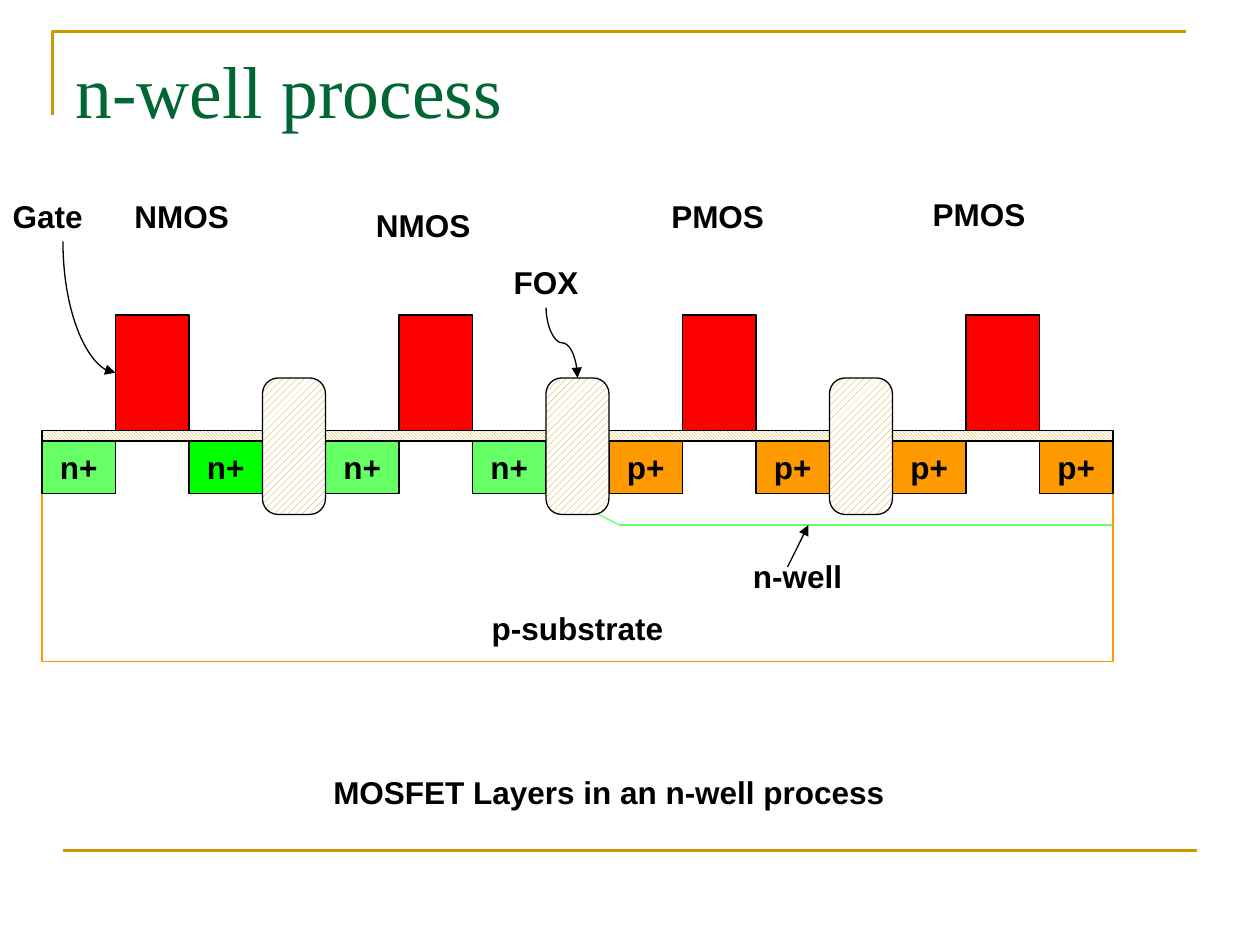
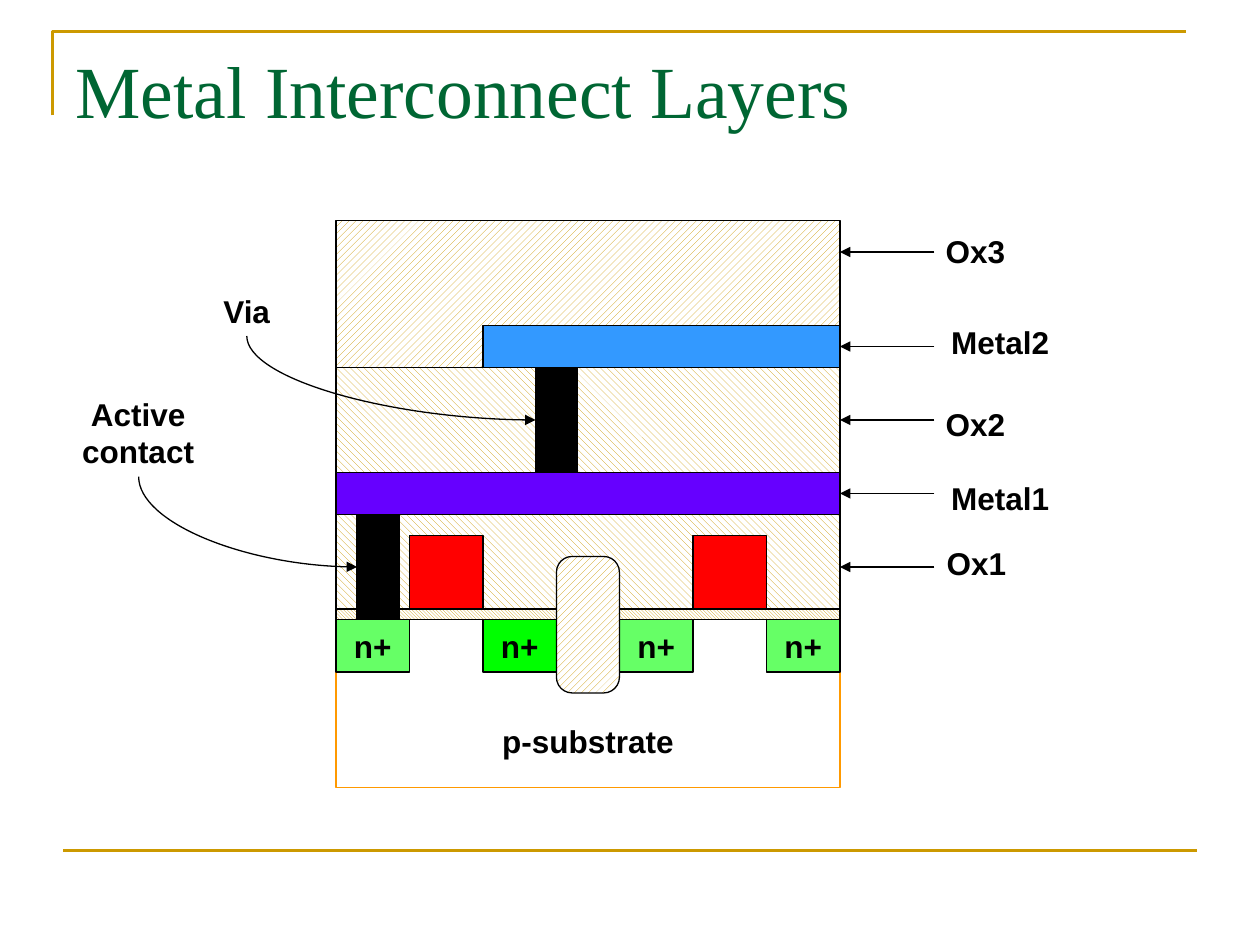
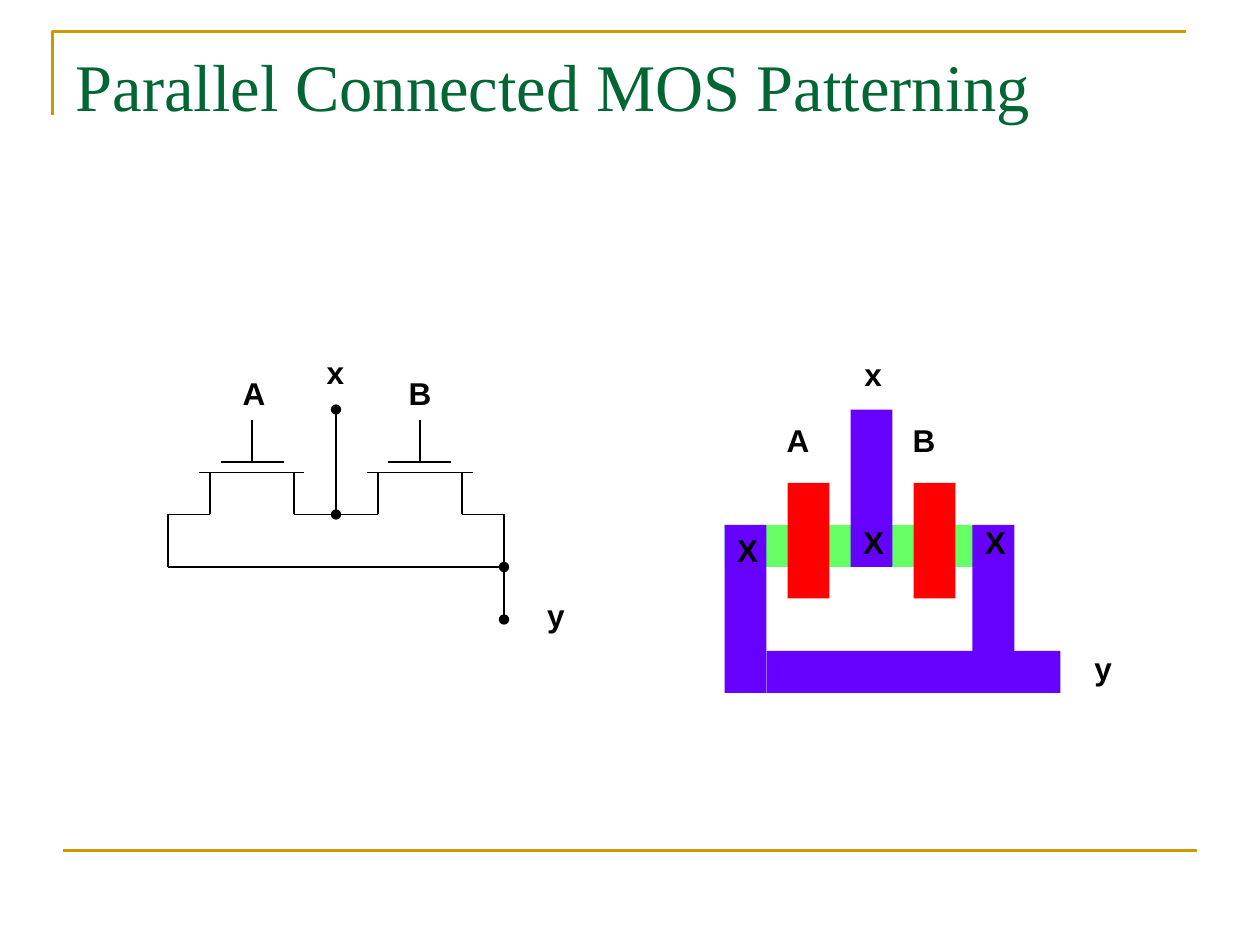
from dataclasses import dataclass
from typing import Any

from lxml import etree
from pptx import Presentation
from pptx import util as u
from pptx.dml.color import RGBColor
from pptx.enum import dml, shapes, text
from pptx.oxml.ns import qn

CELL = u.Inches(1) // 12
COLUMNS, ROWS = 120, 90

BLACK = RGBColor(0x00, 0x00, 0x00)
WHITE = RGBColor(0xFF, 0xFF, 0xFF)
GOLD = RGBColor(0xCC, 0x99, 0x00)
TITLE_GREEN = RGBColor(0x00, 0x66, 0x33)
N_GREEN = RGBColor(0x66, 0xFF, 0x66)
BRIGHT_GREEN = RGBColor(0x00, 0xFF, 0x00)
P_ORANGE = RGBColor(0xFF, 0x99, 0x00)
GATE_RED = RGBColor(0xFF, 0x00, 0x00)
METAL1_PURPLE = RGBColor(0x66, 0x00, 0xFF)
METAL2_BLUE = RGBColor(0x33, 0x99, 0xFF)

UPWARD = dml.MSO_PATTERN.WIDE_UPWARD_DIAGONAL
DOWNWARD = dml.MSO_PATTERN.WIDE_DOWNWARD_DIAGONAL
THIN_OXIDE = dml.MSO_PATTERN.DARK_DOWNWARD_DIAGONAL

DIFFUSION, FOX_WIDTH = 7, 6
PERIOD = 3 * DIFFUSION + FOX_WIDTH


def write(text_frame, words):
    """Set bold centred label text."""
    text_frame.text = words
    for paragraph in text_frame.paragraphs:
        paragraph.alignment = text.PP_ALIGN.CENTER
        for run in paragraph.runs:
            run.font.name = "Arial"
            run.font.size = u.Pt(18)
            run.font.bold = True
            run.font.color.rgb = BLACK


def style_line(connector, color, width, head=None, tail=None):
    """Set a connector's colour, width and ends, without a shadow."""
    connector.line.color.rgb = color
    connector.line.width = u.Pt(width)
    properties = connector._element.spPr
    for tag, kind in (("a:headEnd", head), ("a:tailEnd", tail)):
        if kind:
            etree.SubElement(properties.find(qn("a:ln")), qn(tag), type=kind)
    etree.SubElement(properties, qn("a:effectLst"))


@dataclass
class Region:
    """A part of a slide whose cells are counted from its own origin."""

    shapes: Any
    column: float = 0
    row: float = 0

    def point(self, column, row):
        """Return the slide position of a cell corner."""
        return round((self.column + column) * CELL), round((self.row + row) * CELL)

    def box(self, column, row, width, height, fill=None, line=BLACK, words=None, rounded=False):
        """Add a plain, patterned or empty box with optional text."""
        kind = shapes.MSO_SHAPE.ROUNDED_RECTANGLE if rounded else shapes.MSO_SHAPE.RECTANGLE
        shape = self.shapes.add_shape(kind, *self.point(column, row), width * CELL, height * CELL)
        shape.shadow.inherit = False
        if rounded:
            shape.adjustments[0] = 0.25
        if fill is None:
            shape.fill.background()
        elif isinstance(fill, RGBColor):
            shape.fill.solid()
            shape.fill.fore_color.rgb = fill
        else:
            shape.fill.patterned()
            shape.fill.pattern = fill
            shape.fill.fore_color.rgb = GOLD
            shape.fill.back_color.rgb = WHITE
        if line is None:
            shape.line.fill.background()
        else:
            shape.line.color.rgb = line
            shape.line.width = u.Pt(0.75)
        if words:
            shape.text_frame.word_wrap = False
            shape.text_frame.vertical_anchor = text.MSO_ANCHOR.MIDDLE
            write(shape.text_frame, words)
        return shape

    def label(self, words, column, row, width, wrap=False):
        """Add a text label that fits its words."""
        height = 4.8 + 3.6 * words.count("\n")
        shape = self.shapes.add_textbox(
            *self.point(column, row), round(width * CELL), round(height * CELL))
        shape.text_frame.word_wrap = wrap
        shape.text_frame.auto_size = text.MSO_AUTO_SIZE.SHAPE_TO_FIT_TEXT
        write(shape.text_frame, words)

    def line(self, start, end, color=BLACK, width=0.75, head=None, tail=None):
        """Add a straight line between two cell corners."""
        connector = self.shapes.add_connector(
            shapes.MSO_CONNECTOR.STRAIGHT, *self.point(*start), *self.point(*end))
        style_line(connector, color, width, head, tail)
        return connector

    def curve(self, start, end, preset="curvedConnector2"):
        """Add a curved arrow that leaves its start downwards."""
        (left, top), (right, bottom) = self.point(*start), self.point(*end)
        middle_x, middle_y = (left + right) // 2, (top + bottom) // 2
        half_width, half_height = (bottom - top) // 2, (right - left) // 2
        connector = self.shapes.add_connector(
            shapes.MSO_CONNECTOR.CURVE, middle_x - half_width, middle_y - half_height,
            middle_x + half_width, middle_y + half_height)
        properties = connector._element.spPr
        properties.find(qn("a:prstGeom")).set("prst", preset)
        frame = properties.find(qn("a:xfrm"))
        frame.set("rot", "16200000")
        frame.set("flipH", "1")
        style_line(connector, BLACK, 0.75, tail="triangle")


def add_frame(layout, slide):
    """Give the layout its corner and bottom rule, drawn by way of a slide."""
    builder = slide.shapes.build_freeform(5, 11, scale=CELL)
    builder.add_line_segments([(5, 3), (113, 3)], close=False)
    corner = builder.convert_to_shape()
    corner.shadow.inherit = False
    corner.fill.background()
    corner.line.color.rgb = GOLD
    corner.line.width = u.Pt(1.5)
    rule = Region(slide.shapes).line((6, 81), (114, 81), GOLD, 1.5)
    for number, shape in enumerate((corner, rule), 101):
        shape._element.xpath(".//p:cNvPr")[0].set("id", str(number))
        layout.shapes._spTree.append(shape._element)


def add_slide(presentation, layout, heading, size=42):
    """Add a slide with its title."""
    slide = presentation.slides.add_slide(layout)
    title = slide.shapes.title
    title.left, title.top, title.width, title.height = (
        u.Inches(0.5), u.Inches(0.31), u.Inches(9), u.Inches(1.25))
    title.text_frame.text = heading
    title.text_frame.auto_size = text.MSO_AUTO_SIZE.NONE
    title.text_frame.vertical_anchor = text.MSO_ANCHOR.TOP
    paragraph = title.text_frame.paragraphs[0]
    paragraph.alignment = text.PP_ALIGN.LEFT
    font = paragraph.runs[0].font
    font.name, font.size = "Times New Roman", u.Pt(size)
    font.color.rgb = TITLE_GREEN
    return slide


def draw_substrate(region, width, height, bottom_margin):
    """Draw the substrate below the surface and the thin oxide on it."""
    substrate = region.box(0, 0, width, height, line=P_ORANGE, words="p-substrate")
    substrate.text_frame.vertical_anchor = text.MSO_ANCHOR.BOTTOM
    substrate.text_frame.margin_bottom = u.Inches(bottom_margin)
    region.box(0, -1, width, 1, THIN_OXIDE)


def draw_transistors(region, dopings, gate_height):
    """Draw a row of transistors parted by field oxide."""
    for index, (doping, source_color, drain_color) in enumerate(dopings):
        left = index * PERIOD
        region.box(left, 0, DIFFUSION, 5, source_color, words=doping)
        region.box(left + 2 * DIFFUSION, 0, DIFFUSION, 5, drain_color, words=doping)
        region.box(left + DIFFUSION, -1 - gate_height, DIFFUSION, gate_height, GATE_RED)
        if index:
            region.box(left - FOX_WIDTH, -6, FOX_WIDTH, 13, UPWARD, rounded=True)


def draw_n_well(region):
    """Draw the n-well cross-section and its labels."""
    draw_substrate(region, 102, 21, 0.12)
    n_type, p_type = ("n+", N_GREEN, N_GREEN), ("p+", P_ORANGE, P_ORANGE)
    draw_transistors(region, [("n+", N_GREEN, BRIGHT_GREEN), n_type, p_type, p_type], 11)
    region.line((55, 8), (102, 8), N_GREEN)
    region.line((53, 7), (55, 8), N_GREEN)
    for words, column, row, width in (
            ("n-well", 66.5, 10.5, 10.9), ("Gate", -4, -23.8, 9.1),
            ("NMOS", 7.6, -23.8, 11.4), ("NMOS", 30.6, -23, 11.4),
            ("PMOS", 58.7, -23.8, 11.3), ("PMOS", 83.6, -24, 11.3),
            ("FOX", 43.7, -17.5, 8.6)):
        region.label(words, column, row, width)
    region.curve((2, -19), (7, -6.5))
    region.curve((48, -12.7), (51, -6), "curvedConnector3")
    region.label("MOSFET Layers in an n-well process", 26, 31, 56, wrap=True)
    region.line((71, 12), (73, 8), tail="triangle")


def draw_interconnect(region):
    """Draw the metal and oxide stack with its labels."""
    width = 48
    region.box(0, -38, width, 14, UPWARD)
    region.box(0, -24, width, 23, DOWNWARD)
    draw_substrate(region, width, 16, 0.22)
    draw_transistors(region, [("n+", N_GREEN, BRIGHT_GREEN), ("n+", N_GREEN, N_GREEN)], 7)
    region.box(2, -10, 4, 10, BLACK)
    metal1 = region.box(0, -14, width, 4, METAL1_PURPLE)
    metal2 = region.box(14, -28, 34, 4, METAL2_BLUE)
    region.box(19, -24, 4, 10, BLACK)
    region.label("Via", -12, -31.8, 7)
    region.label("Active\ncontact", -25.4, -22, 13.1)
    region.curve((-8.5, -27), (19, -19))
    region.curve((-18.8, -13.6), (2, -5))
    for words, arrow_row, column, row, label_width, layer in (
            ("Ox3", -35, 56.7, -37.5, 8.4, None),
            ("Metal2", -26, 57.3, -28.8, 11.9, metal2),
            ("Ox2", -19, 56.7, -21, 8.4, None),
            ("Metal1", -12, 57.3, -14, 11.9, metal1),
            ("Ox1", -5, 56.8, -7.8, 8.4, None)):
        region.label(words, column, row, label_width)
        arrow = region.line((57, arrow_row), (width, arrow_row), tail="triangle")
        if layer:
            arrow.end_connect(layer, 3)


def draw_transistor_symbol(region):
    """Draw one transistor symbol with its leads."""
    for start, end in (
            ((3, 5), (13, 5)), ((5, 4), (11, 4)), ((8, 0), (8, 4)),
            ((12, 5), (12, 9)), ((4, 5), (4, 9)),
            ((12, 9), (16, 9)), ((0, 9), (4, 9))):
        region.line(start, end)


def draw_schematic(region):
    """Draw two transistors connected in parallel."""
    for offset in (0, 16):
        draw_transistor_symbol(Region(region.shapes, region.column + offset, region.row))
    region.line((0, 9), (0, 14))
    region.line((32, 9), (32, 14), tail="oval")
    region.line((0, 14), (32, 14))
    region.line((32, 14), (32, 19), tail="oval")
    region.line((16, -1), (16, 9), head="oval", tail="oval")
    for words, column, row, width in (
            ("x", 13.9, -7, 4.1), ("y", 34.9, 16.2, 4.1),
            ("A", 5.9, -5, 4.6), ("B", 21.7, -5, 4.6)):
        region.label(words, column, row, width)


def draw_mask_layout(region):
    """Draw the mask pattern of the parallel transistors."""
    region.box(0, 0, 27, 4, N_GREEN, None)
    for column, row, width, height in (
            (0, 0, 4, 16), (12, -11, 4, 15), (4, 12, 28, 4), (23.6, 0, 4, 16)):
        region.box(column, row, width, height, METAL1_PURPLE, None)
    for column in (6, 18):
        region.box(column, -4, 4, 11, GATE_RED, None)
    for words, column, row, width in (
            ("X", 0, 0, 4.4), ("X", 12, -0.8, 4.4), ("X", 23.6, -0.8, 4.4),
            ("A", 4.7, -10.5, 4.6), ("B", 16.7, -10.5, 4.6),
            ("x", 12.1, -16.8, 4.1), ("y", 34, 11.2, 4.1)):
        region.label(words, column, row, width)


def main():
    """Build the three slides."""
    presentation = Presentation()
    presentation.slide_width, presentation.slide_height = COLUMNS * CELL, ROWS * CELL
    layout = presentation.slide_layouts[5]

    slide = add_slide(presentation, layout, "n-well process")
    add_frame(layout, slide)
    draw_n_well(Region(slide.shapes, 4, 42))

    slide = add_slide(presentation, layout, "Metal Interconnect Layers")
    draw_interconnect(Region(slide.shapes, 32, 59))

    slide = add_slide(presentation, layout, "Parallel Connected MOS Patterning", 38)
    draw_schematic(Region(slide.shapes, 16, 40))
    draw_mask_layout(Region(slide.shapes, 69, 50))

    presentation.save("out.pptx")


if __name__ == "__main__":
    main()
